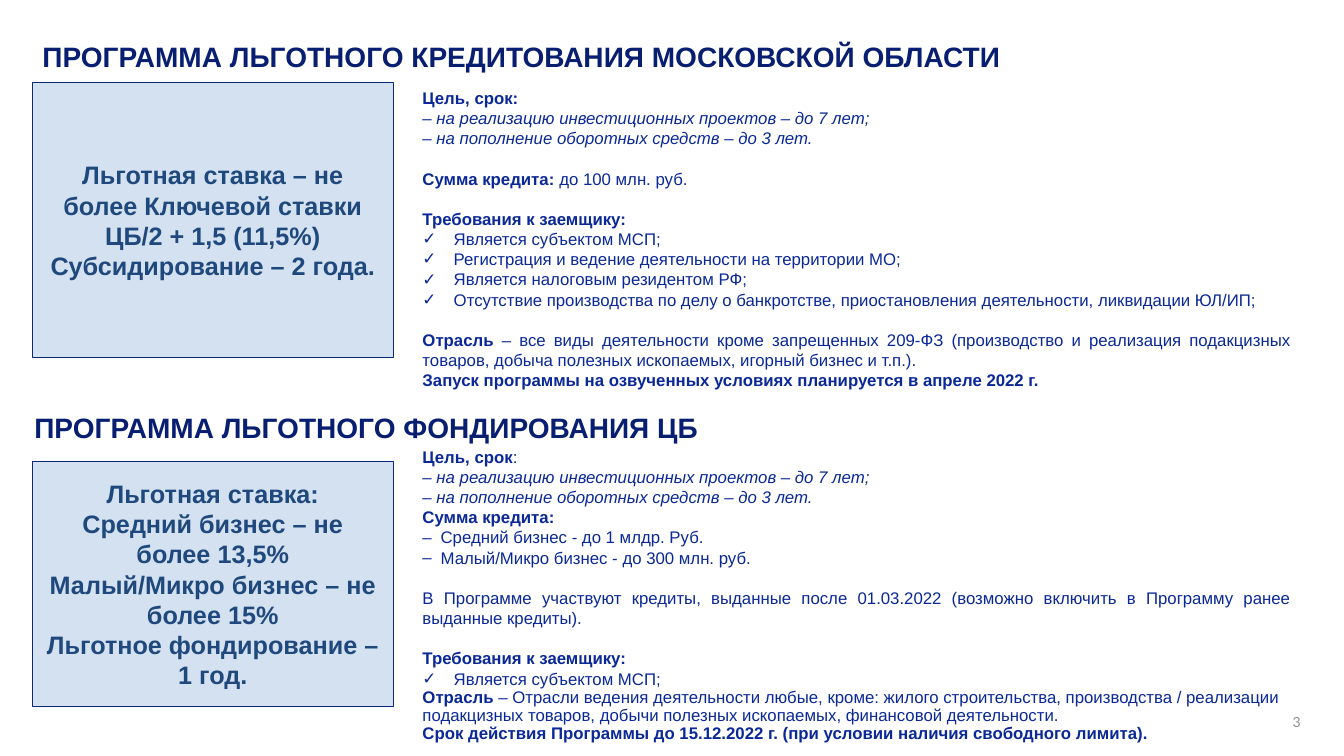
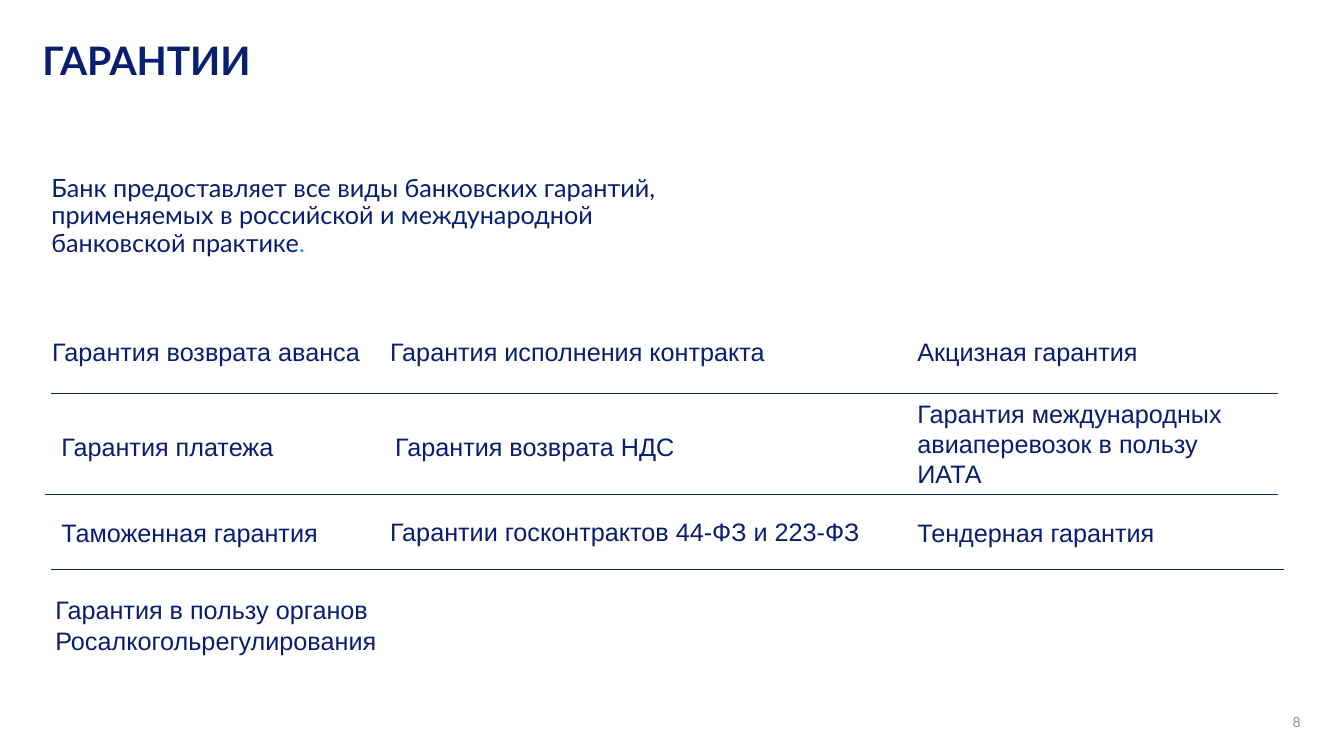
from dataclasses import dataclass

from lxml.etree import SubElement
from pptx import Presentation
from pptx.dml.color import RGBColor
from pptx.enum.shapes import MSO_CONNECTOR, MSO_SHAPE
from pptx.enum.text import MSO_ANCHOR, MSO_AUTO_SIZE, PP_ALIGN
from pptx.oxml.ns import qn
from pptx.util import Inches, Pt

NAVY = RGBColor(0x08, 0x1E, 0x70)
BLUE = RGBColor(0x0A, 0x28, 0x96)
OUTLINE = RGBColor(0x0A, 0x29, 0x73)
STEEL = RGBColor(0x1F, 0x49, 0x7D)
PALE = RGBColor(0xD4, 0xE1, 0xF0)
CYAN = RGBColor(0x00, 0xAA, 0xFF)
GREY = RGBColor(0x90, 0x90, 0x90)

# Line height as a share of the text size
NORMAL, TIGHT = 1.2, 1.08

HEADING = dict(name="Arial", size=Pt(20), bold=True, color=NAVY)
COVER_TITLE = dict(name="Lato", size=Pt(28), bold=True, color=NAVY)
LEAD = dict(name="Lato", size=Pt(18), color=NAVY)
RATE = dict(name="Arial", size=Pt(18), bold=True, color=STEEL)
DETAIL = dict(name="Arial", size=Pt(12), bold=False, color=BLUE)
ITEM = dict(name="Arial", size=Pt(18), color=NAVY)
NUMBER = dict(name="Lato", size=Pt(10), color=GREY)

BOLD, ITALIC = dict(bold=True), dict(italic=True)


@dataclass
class Para:
    """One paragraph: spans are (text, format changes) pairs."""
    spans: list
    align: PP_ALIGN = PP_ALIGN.LEFT
    leading: float = NORMAL
    gap: float = 0
    bullet: str = ""
    indent: float = 0


class Deck:
    def __init__(self):
        self.deck = Presentation()
        self.deck.slide_width = Inches(13.33)
        self.deck.slide_height = Inches(7.5)
        self.page = None

    def start(self, layout, number):
        self.page = self.deck.slides.add_slide(self.deck.slide_layouts[layout])
        self.text((9.99, 7.08, 2.91, 0.42), [Para([(number, {})], PP_ALIGN.RIGHT)],
                  NUMBER, (0.1, 0, 0, 0.05))

    def fill(self, shape, paras, style, insets=(0.1, 0.05, 0.1, 0.05),
             anchor=MSO_ANCHOR.TOP):
        frame = shape.text_frame
        sides = ("margin_left", "margin_top", "margin_right", "margin_bottom")
        settings = dict(zip(sides, map(Inches, insets)), word_wrap=True,
                        auto_size=MSO_AUTO_SIZE.NONE, vertical_anchor=anchor)
        for name, value in settings.items():
            setattr(frame, name, value)
        for index, para in enumerate(paras):
            target = frame.add_paragraph() if index else frame.paragraphs[0]
            self.bullet(target, para)
            target.alignment = para.align
            target.line_spacing = Pt(style["size"].pt * para.leading)
            target.space_before = Pt(para.gap)
            for text, changes in para.spans:
                span = target.add_run()
                span.text = text
                for name, value in {**style, **changes}.items():
                    if name == "color":
                        span.font.color.rgb = value
                    else:
                        setattr(span.font, name, value)

    def bullet(self, target, para):
        props = target._p.get_or_add_pPr()
        props.set("marL", str(Inches(para.indent)))
        props.set("indent", str(-Inches(para.indent)))
        if para.bullet:
            SubElement(props, qn("a:buFont")).set("typeface", "Arial")
            SubElement(props, qn("a:buChar")).set("char", para.bullet)
        else:
            SubElement(props, qn("a:buNone"))

    def placeholder(self, index, place, paras, style, **options):
        shape = self.page.placeholders[index]
        shape.left, shape.top, shape.width, shape.height = map(Inches, place)
        self.fill(shape, paras, style, **options)

    def title(self, place, text, style):
        self.placeholder(0, place, [Para([(text, {})], leading=TIGHT)], style,
                         insets=(0, 0, 0, 0))

    def text(self, place, paras, style, insets=(0.1, 0.05, 0.1, 0.05)):
        box = self.page.shapes.add_textbox(*map(Inches, place))
        self.fill(box, paras, style, insets)

    def panel(self, place, lines):
        box = self.page.shapes.add_shape(MSO_SHAPE.RECTANGLE, *map(Inches, place))
        box.shadow.inherit = False
        box.fill.solid()
        box.fill.fore_color.rgb = PALE
        box.line.color.rgb = OUTLINE
        box.line.width = Pt(0.75)
        paras = [Para([(line, {})], PP_ALIGN.CENTER) for line in lines]
        self.fill(box, paras, RATE, (0.12, 0.05, 0.12, 0.05), MSO_ANCHOR.MIDDLE)

    def rule(self, left, right, top):
        line = self.page.shapes.add_connector(
            MSO_CONNECTOR.STRAIGHT, *map(Inches, (left, top, right, top)))
        line.line.color.rgb = OUTLINE
        line.line.width = Pt(0.75)
        SubElement(line._element.spPr, qn("a:effectLst"))


def detail(*spans, **options):
    return Para(list(spans), **{"align": PP_ALIGN.JUSTIFY, **options})


def check(text):
    return detail((text, {}), bullet="✓", indent=0.31)


def dash(text):
    return detail((text, {}), bullet="–", indent=0.18)


def purposes():
    return [detail(("– ", {}), (text, ITALIC)) for text in (
        "на реализацию инвестиционных проектов – до 7 лет;",
        "на пополнение оборотных средств – до 3 лет.")]


def build_programmes(deck):
    blank = 14.4
    deck.start(3, "3")

    # Regional lending programme
    deck.title((0.42, 0.43, 11.11, 0.3),
               "ПРОГРАММА ЛЬГОТНОГО КРЕДИТОВАНИЯ МОСКОВСКОЙ ОБЛАСТИ", HEADING)
    deck.panel((0.32, 0.82, 3.58, 2.73), [
        "Льготная ставка – не более Ключевой ставки ЦБ/2 + 1,5 (11,5%)",
        "Субсидирование – 2 года."])
    deck.placeholder(1, (4.09, 0.82, 8.82, 3.13), [
        detail(("Цель, срок:", BOLD)),
        *purposes(),
        detail(("Сумма кредита: ", BOLD), ("до 100 млн. руб.", {}), gap=blank),
        detail(("Требования к заемщику:", BOLD), gap=blank),
        check("Является субъектом МСП;"),
        check("Регистрация и ведение деятельности на территории МО;"),
        check("Является налоговым резидентом РФ;"),
        check("Отсутствие производства по делу о банкротстве, приостановления "
              "деятельности, ликвидации ЮЛ/ИП;"),
        detail(("Отрасль ", BOLD),
               ("– все виды деятельности кроме запрещенных 209-ФЗ (производство и "
                "реализация подакцизных товаров, добыча полезных ископаемых, "
                "игорный бизнес и т.п.).", {}), gap=blank),
        detail(("Запуск программы на озвученных условиях планируется "
                "в апреле 2022 г.", BOLD)),
    ], DETAIL)

    # Central bank funding programme
    deck.text((0.34, 4.11, 11.11, 0.3),
              [Para([("ПРОГРАММА ЛЬГОТНОГО ФОНДИРОВАНИЯ ЦБ", {})], leading=TIGHT)],
              HEADING, (0, 0, 0, 0))
    deck.panel((0.32, 4.58, 3.58, 2.43), [
        "Льготная ставка:",
        "Средний бизнес – не более 13,5%",
        "Малый/Микро бизнес – не более 15%",
        "Льготное фондирование – 1 год."])
    closing = dict(align=PP_ALIGN.LEFT, leading=TIGHT)
    deck.placeholder(2, (4.09, 4.38, 8.82, 3.12), [
        detail(("Цель, срок", BOLD), (":", {})),
        *purposes(),
        detail(("Сумма кредита:", BOLD)),
        dash("Средний бизнес - до 1 млдр. Руб."),
        dash("Малый/Микро бизнес - до 300 млн. руб."),
        detail(("В Программе участвуют кредиты, выданные после 01.03.2022 "
                "(возможно включить в Программу ранее выданные кредиты).", {}),
               gap=blank),
        detail(("Требования к заемщику:", BOLD), gap=blank),
        check("Является субъектом МСП;"),
        detail(("Отрасль ", BOLD),
               ("– Отрасли ведения деятельности любые, кроме: жилого строительства, "
                "производства / реализации подакцизных товаров, добычи полезных "
                "ископаемых, финансовой деятельности.", {}), **closing),
        detail(("Срок действия Программы до 15.12.2022 г. (при условии наличия "
                "свободного лимита).", BOLD), **closing),
    ], DETAIL)


def build_guarantees(deck):
    deck.start(1, "8")
    deck.title((0.42, 0.41, 7.5, 0.42), "ГАРАНТИИ", COVER_TITLE)
    deck.placeholder(1, (0.51, 1.74, 6.66, 0.86), [Para([
        ("Банк предоставляет все виды банковских гарантий, применяемых в российской "
         "и международной банковской практике", {}),
        (".", dict(color=CYAN))], leading=TIGHT)], LEAD, insets=(0, 0, 0, 0))

    # Guarantee types: left, top, width, height, text
    items = [
        (0.42, 3.29, 3.4, 0.4, "Гарантия возврата аванса"),
        (3.77, 3.29, 5.2, 0.4, "Гарантия исполнения контракта"),
        (9, 3.29, 3.68, 0.4, "Акцизная гарантия"),
        (0.51, 4.23, 3.3, 0.4, "Гарантия платежа"),
        (3.82, 4.23, 5.15, 0.4, "Гарантия возврата НДС"),
        (9, 3.9, 3.68, 1.01, "Гарантия международных авиаперевозок в пользу ИАТА"),
        (0.51, 5.08, 3.3, 0.4, "Таможенная гарантия"),
        (3.77, 5.07, 5.2, 0.4, "Гарантии госконтрактов 44-ФЗ и 223-ФЗ"),
        (9, 5.08, 3.68, 0.4, "Тендерная гарантия"),
        (0.45, 5.85, 6.11, 0.71, "Гарантия в пользу органов Росалкогольрегулирования"),
    ]
    for *place, text in items:
        deck.text(place, [Para([(text, {})])], ITEM)

    # Row dividers
    for left, right, top in ((0.51, 12.68, 3.9), (0.45, 12.68, 4.91),
                             (0.51, 12.73, 5.65)):
        deck.rule(left, right, top)


def main():
    deck = Deck()
    build_programmes(deck)
    build_guarantees(deck)
    deck.deck.save("out.pptx")


if __name__ == "__main__":
    main()
